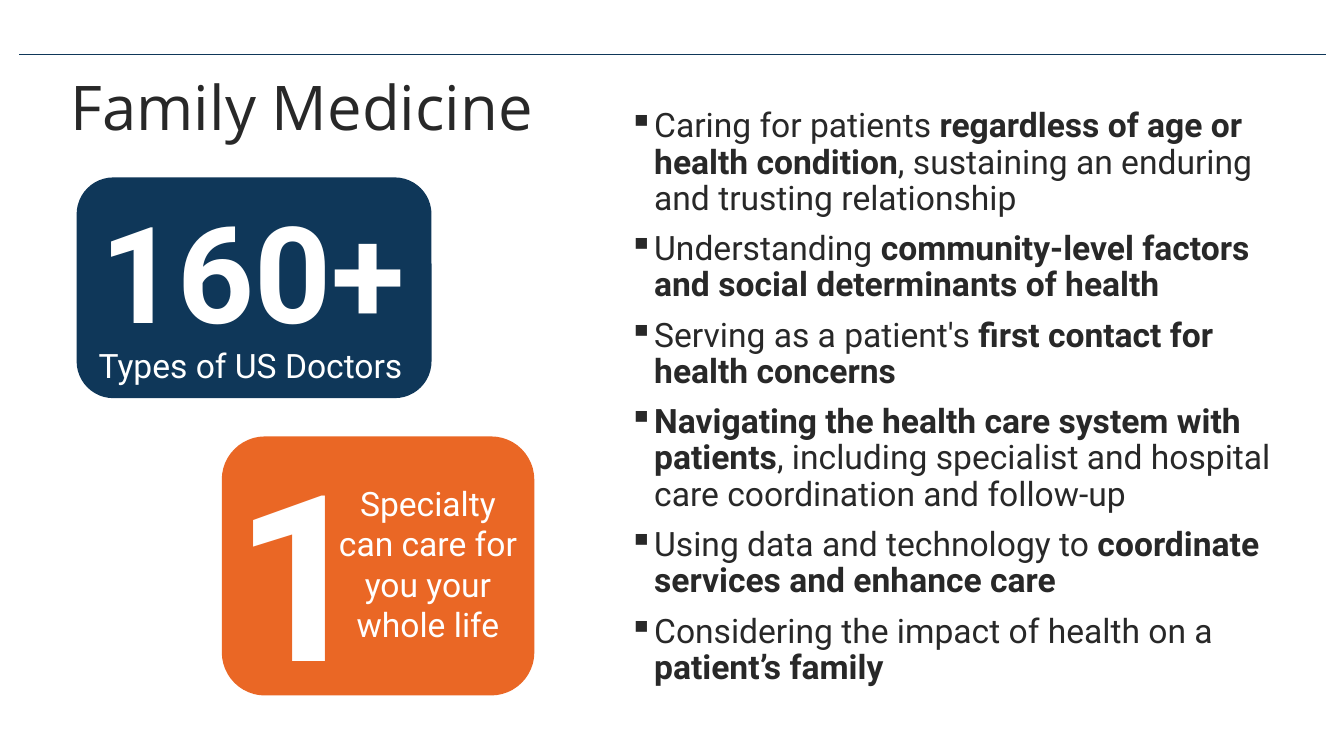
from lxml import etree
from pptx import Presentation
from pptx import util as u
from pptx.dml.color import RGBColor
from pptx.enum import shapes, text
from pptx.oxml.ns import qn

PX = 9144  # 100 px to the inch
COLORS = {"navy": "0F3759", "orange": "EA6725", "ink": "282828", "white": "FFFFFF"}


def add_run(p, words, size, color, bold=False, font="Roboto"):
    r = p.add_run()
    r.text = words
    r.font.size, r.font.bold, r.font.name = u.Pt(size), bold, font
    r.font.color.rgb = RGBColor.from_string(COLORS[color])


def px(*lengths):
    return [n * PX for n in lengths]


prs = Presentation()
prs.slide_width, prs.slide_height = px(1333, 750)
s = prs.slides.add_slide(prs.slide_layouts[5])

# Rule across the top
line = s.shapes.add_connector(shapes.MSO_CONNECTOR.STRAIGHT, *px(19, 54, 1315, 54))
line.line.color.rgb = RGBColor.from_string(COLORS["navy"])
line.line.width = u.Pt(0.5)
etree.SubElement(line._element.spPr, qn("a:effectLst"))

# Title
title = s.shapes.title
title.left, title.top, title.width, title.height = px(60, 72, 1150, 111)
tf = title.text_frame
tf.vertical_anchor = text.MSO_ANCHOR.TOP
tf.auto_size = text.MSO_AUTO_SIZE.NONE
p = tf.paragraphs[0]
p.alignment, p.line_spacing = text.PP_ALIGN.LEFT, 0.9
add_run(p, "Family Medicine", 44, "ink", font="Open Sans")

# Bulleted roles: (words, bold) runs per bullet
roles = [
    [("Caring for patients ", False), ("regardless of age or health condition", True),
     (", sustaining an enduring and trusting relationship", False)],
    [("Understanding ", False),
     ("community-level factors and social determinants of health", True)],
    [("Serving as a patient's ", False), ("first contact for health concerns", True)],
    [("Navigating the health care system with patients", True),
     (", including specialist and hospital care coordination and follow-up", False)],
    [("Using data and technology to ", False),
     ("coordinate services and enhance care", True)],
    [("Considering the impact of health on a ", False), ("patient’s family", True)],
]
tf = s.shapes.add_textbox(*px(614, 103, 694, 624)).text_frame
tf.word_wrap = True
for i, role in enumerate(roles):
    p = tf.add_paragraph() if i else tf.paragraphs[0]
    pPr = p._p.get_or_add_pPr()
    pPr.set("marL", str(25 * PX))
    pPr.set("indent", str(-25 * PX))
    etree.SubElement(pPr, qn("a:buChar"), char="▪")
    p.line_spacing = 0.9
    p.space_before = u.Pt(10 if i else 0)
    for words, bold in role:
        add_run(p, words, 24, "ink", bold)

# Number cards: box, colour, then texts (box, words, size, bold, wrap, alignment)
LEFT, CENTER = text.PP_ALIGN.LEFT, text.PP_ALIGN.CENTER
cards = [
    ((76, 176, 352, 219), "navy", [
        ((90, 183, 323, 172), "160+", 96, True, False, LEFT),
        ((88, 337, 329, 50), "Types of US Doctors", 24, False, False, LEFT)]),
    ((220, 433, 310, 257), "orange", [
        ((223, 421, 133, 289), "1", 166, True, True, LEFT),
        ((318, 474, 213, 172), "Specialty can care for you your whole life",
         24, False, True, CENTER)]),
]
for box, color, labels in cards:
    sp = s.shapes.add_shape(shapes.MSO_SHAPE.ROUNDED_RECTANGLE, *px(*box))
    sp.shadow.inherit = False
    sp.fill.solid()
    sp.fill.fore_color.rgb = RGBColor.from_string(COLORS[color])
    sp.line.fill.background()
    for label_box, words, size, bold, wrap, align in labels:
        tf = s.shapes.add_textbox(*px(*label_box)).text_frame
        tf.word_wrap = wrap
        tf.auto_size = text.MSO_AUTO_SIZE.SHAPE_TO_FIT_TEXT
        p = tf.paragraphs[0]
        p.alignment = align
        add_run(p, words, size, "white", bold)

prs.save("out.pptx")
